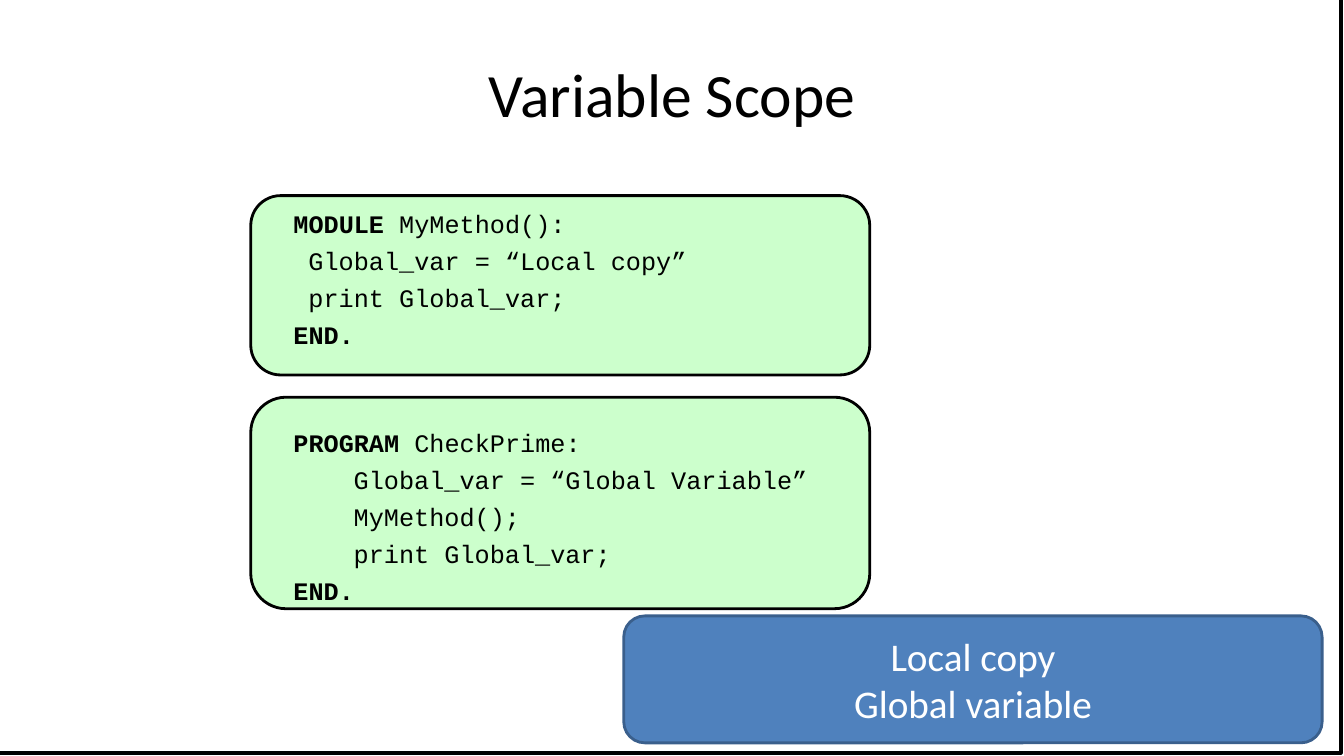
from lxml.etree import SubElement
from pptx import Presentation
from pptx.dml.color import RGBColor
from pptx.enum.shapes import MSO_SHAPE as Shape
from pptx.enum.text import MSO_ANCHOR as Anchor, MSO_AUTO_SIZE as AutoSize, PP_ALIGN as Align
from pptx.oxml.ns import qn
from pptx.util import Cm, Pt

COLORS = {
    "black": "000000",
    "white": "FFFFFF",
    "code": "CCFFCC",
    "output": "4F81BD",
    "output_edge": "3A5F8C",
}
CODE_FONT = {"name": "Courier New", "size": Pt(18)}
TITLE_FONT = {"name": "Calibri", "size": Pt(44), "bold": False}
OUTPUT_FONT = {"name": "Calibri", "size": Pt(28), "bold": False}
CHARACTER_WIDTH = 0.38
LINE_GAP, BLOCK_GAP = 4.7, 56
CODE = [
    (0, LINE_GAP, "MODULE ", "MyMethod():"),
    (1, LINE_GAP, "", "Global_var = “Local copy”"),
    (1, LINE_GAP, "", "print Global_var;"),
    (0, LINE_GAP, "END.", ""),
    (0, BLOCK_GAP, "PROGRAM ", "CheckPrime:"),
    (4, LINE_GAP, "", "Global_var = “Global Variable”"),
    (4, LINE_GAP, "", "MyMethod();"),
    (4, LINE_GAP, "", "print Global_var;"),
    (0, LINE_GAP, "END.", ""),
]


def apply(target, formats):
    """Set each named attribute on the target."""
    for name, value in formats.items():
        setattr(target, name, value)


class SlideBuilder:
    """Hold the colours and the current slide, and add its elements."""

    def __init__(self, presentation, colors):
        """Start a title and content slide."""
        self.colors = colors
        self.slide = presentation.slides.add_slide(presentation.slide_layouts[1])

    def color(self, name):
        """Return the named colour."""
        return RGBColor.from_string(self.colors[name])

    def add_text(self, paragraph, text, font, color):
        """Add a formatted run to a paragraph."""
        run = paragraph.add_run()
        run.text = text
        apply(run.font, font)
        run.font.color.rgb = self.color(color)

    def place(self, placeholder, box, anchor):
        """Move a placeholder to the front and into its box."""
        apply(placeholder, dict(zip(("left", "top", "width", "height"), map(Cm, box))))
        apply(placeholder.text_frame, {"auto_size": AutoSize.NONE, "word_wrap": True,
                                       "vertical_anchor": anchor})
        self.slide.shapes._spTree.append(placeholder._element)
        return placeholder.text_frame

    def box(self, kind, box, fill, line, width):
        """Add a shape with an outline and an optional fill."""
        shape = self.slide.shapes.add_shape(kind, *map(Cm, box))
        shape.shadow.inherit = False
        if fill:
            shape.fill.solid()
            shape.fill.fore_color.rgb = self.color(fill)
        else:
            shape.fill.background()
        shape.line.color.rgb = self.color(line)
        shape.line.width = Pt(width)
        return shape

    def centred(self, frame, lines, font, color):
        """Fill a text frame with centred lines."""
        frame.vertical_anchor = Anchor.MIDDLE
        for index, line in enumerate(lines):
            paragraph = frame.add_paragraph() if index else frame.paragraphs[0]
            paragraph.alignment = Align.CENTER
            self.add_text(paragraph, line, font, color)

    def title(self, text, box):
        """Fill the title placeholder."""
        frame = self.place(self.slide.shapes.title, box, Anchor.MIDDLE)
        self.centred(frame, [text], TITLE_FONT, "black")

    def code(self, lines, box):
        """Fill the body placeholder with indented code and bold keywords."""
        frame = self.place(self.slide.placeholders[1], box, Anchor.TOP)
        for index, (indent, gap, keyword, rest) in enumerate(lines):
            paragraph = frame.add_paragraph() if index else frame.paragraphs[0]
            apply(paragraph, {"space_before": Pt(gap), "alignment": Align.LEFT})
            properties = paragraph._p.get_or_add_pPr()
            properties.set("marL", str(Cm(indent * CHARACTER_WIDTH)))
            properties.set("indent", "0")
            SubElement(properties, qn("a:buNone"))
            for text, bold in ((keyword, True), (rest, False)):
                if text:
                    self.add_text(paragraph, text, {**CODE_FONT, "bold": bold}, "black")


def main():
    """Build the slide and save it."""
    presentation = Presentation()
    apply(presentation, {"slide_width": Cm(33.87), "slide_height": Cm(19.05)})
    builder = SlideBuilder(presentation, COLORS)
    builder.box(Shape.RECTANGLE, (-0.08, -0.08, 33.87, 19.05), None, "black", 3)
    for top, height in ((10.01, 5.33), (4.93, 4.52)):
        builder.box(Shape.ROUNDED_RECTANGLE, (6.32, top, 15.6, height), "code", "black", 2)
    builder.code(CODE, (7.14, 5.13, 14.81, 12.57))
    output = builder.box(Shape.ROUNDED_RECTANGLE, (15.72, 15.52, 17.6, 3.2),
                         "output", "output_edge", 2)
    builder.centred(output.text_frame, ["Local copy", "Global variable"], OUTPUT_FONT, "white")
    builder.title("Variable Scope", (1.7, 0.76, 30.48, 3.18))
    presentation.save("out.pptx")


if __name__ == "__main__":
    main()
